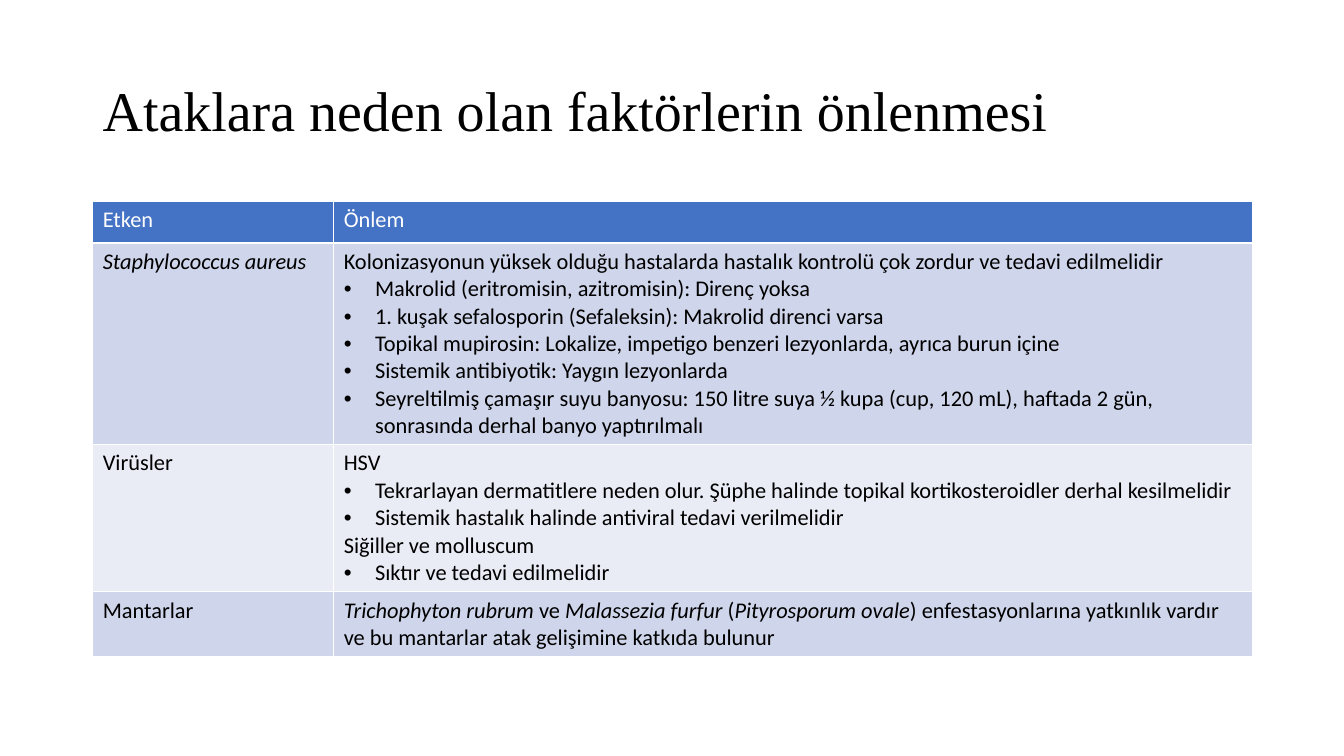
from dataclasses import dataclass

from lxml.etree import SubElement
from pptx import Presentation
from pptx.dml.color import RGBColor
from pptx.enum.text import MSO_ANCHOR
from pptx.oxml.ns import qn
from pptx.util import Inches, Pt

TITLE = "Ataklara neden olan faktörlerin önlenmesi"
HEADINGS = ("Etken", "Önlem")
BULLET = "• "
ITALIC = "*"
AGENTS = [
    ("*Staphylococcus aureus*", [
        "Kolonizasyonun yüksek olduğu hastalarda hastalık kontrolü çok zordur ve tedavi edilmelidir",
        "• Makrolid (eritromisin, azitromisin): Direnç yoksa",
        "• 1. kuşak sefalosporin (Sefaleksin): Makrolid direnci varsa",
        "• Topikal mupirosin: Lokalize, impetigo benzeri lezyonlarda, ayrıca burun içine",
        "• Sistemik antibiyotik: Yaygın lezyonlarda",
        "• Seyreltilmiş çamaşır suyu banyosu: 150 litre suya ½ kupa (cup, 120 mL), "
        "haftada 2 gün, sonrasında derhal banyo yaptırılmalı",
    ]),
    ("Virüsler", [
        "HSV",
        "• Tekrarlayan dermatitlere neden olur. Şüphe halinde topikal kortikosteroidler "
        "derhal kesilmelidir",
        "• Sistemik hastalık halinde antiviral tedavi verilmelidir",
        "Siğiller ve molluscum",
        "• Sıktır ve tedavi edilmelidir",
    ]),
    ("Mantarlar", [
        "*Trichophyton rubrum* ve *Malassezia furfur *(*Pityrosporum ovale*) enfestasyonlarına "
        "yatkınlık vardır ve bu mantarlar atak gelişimine katkıda bulunur",
    ]),
]
COLUMN_WIDTHS = (2.39, 9.11)
ROW_HEIGHTS = (0.41, 2.0, 1.46, 0.64)
LEFT, WIDTH = 0.92, 11.5
BULLET_INDENT = 0.31


@dataclass(frozen=True)
class Theme:
    title_font: str = "Times New Roman"
    body_font: str = "Calibri"
    title_size: int = 40
    body_size: int = 16
    ink: str = "000000"
    header_ink: str = "FFFFFF"
    header_fill: str = "4472C4"
    bands: tuple = ("CFD5EA", "E9EBF5")


THEME = Theme()


def write(frame, lines, *, font=THEME.body_font, size=THEME.body_size,
          color=THEME.ink, spacing=None):
    for index, line in enumerate(lines):
        paragraph = frame.paragraphs[0] if index == 0 else frame.add_paragraph()
        if line.startswith(BULLET):
            indent = Inches(BULLET_INDENT)
            properties = paragraph._p.get_or_add_pPr()
            properties.set("marL", str(indent))
            properties.set("indent", str(-indent))
            SubElement(properties, qn("a:buFont"), typeface="Arial")
            SubElement(properties, qn("a:buChar"), char=BULLET.strip())
        if spacing:
            paragraph.line_spacing = spacing
        for position, part in enumerate(line.removeprefix(BULLET).split(ITALIC)):
            if part:
                run = paragraph.add_run()
                run.text = part
                run.font.name = font
                run.font.size = Pt(size)
                run.font.bold = False
                run.font.italic = position % 2 == 1
                run.font.color.rgb = RGBColor.from_string(color)


def add_title(slide):
    title = slide.shapes.add_textbox(Inches(LEFT), Inches(0.4), Inches(WIDTH), Inches(1.45))
    title.text_frame.word_wrap = True
    title.text_frame.vertical_anchor = MSO_ANCHOR.MIDDLE
    write(title.text_frame, [TITLE], font=THEME.title_font, size=THEME.title_size, spacing=0.9)


def add_measures(slide):
    rows = [[[heading] for heading in HEADINGS]]
    rows += [[[agent], measures] for agent, measures in AGENTS]
    table = slide.shapes.add_table(len(rows), len(HEADINGS), Inches(LEFT), Inches(2),
                                   Inches(WIDTH), Inches(sum(ROW_HEIGHTS))).table
    for column, width in zip(table.columns, COLUMN_WIDTHS):
        column.width = Inches(width)
    for number, (cells, height) in enumerate(zip(rows, ROW_HEIGHTS)):
        table.rows[number].height = Inches(height)
        header = number == 0
        fill = THEME.header_fill if header else THEME.bands[(number - 1) % len(THEME.bands)]
        for cell, lines in zip(table.rows[number].cells, cells):
            cell.fill.solid()
            cell.fill.fore_color.rgb = RGBColor.from_string(fill)
            write(cell.text_frame, lines, color=THEME.header_ink if header else THEME.ink)


def main():
    deck = Presentation()
    deck.slide_width, deck.slide_height = Inches(13.33), Inches(7.5)
    slide = deck.slides.add_slide(deck.slide_layouts[6])
    add_title(slide)
    add_measures(slide)
    deck.save("out.pptx")


if __name__ == "__main__":
    main()
